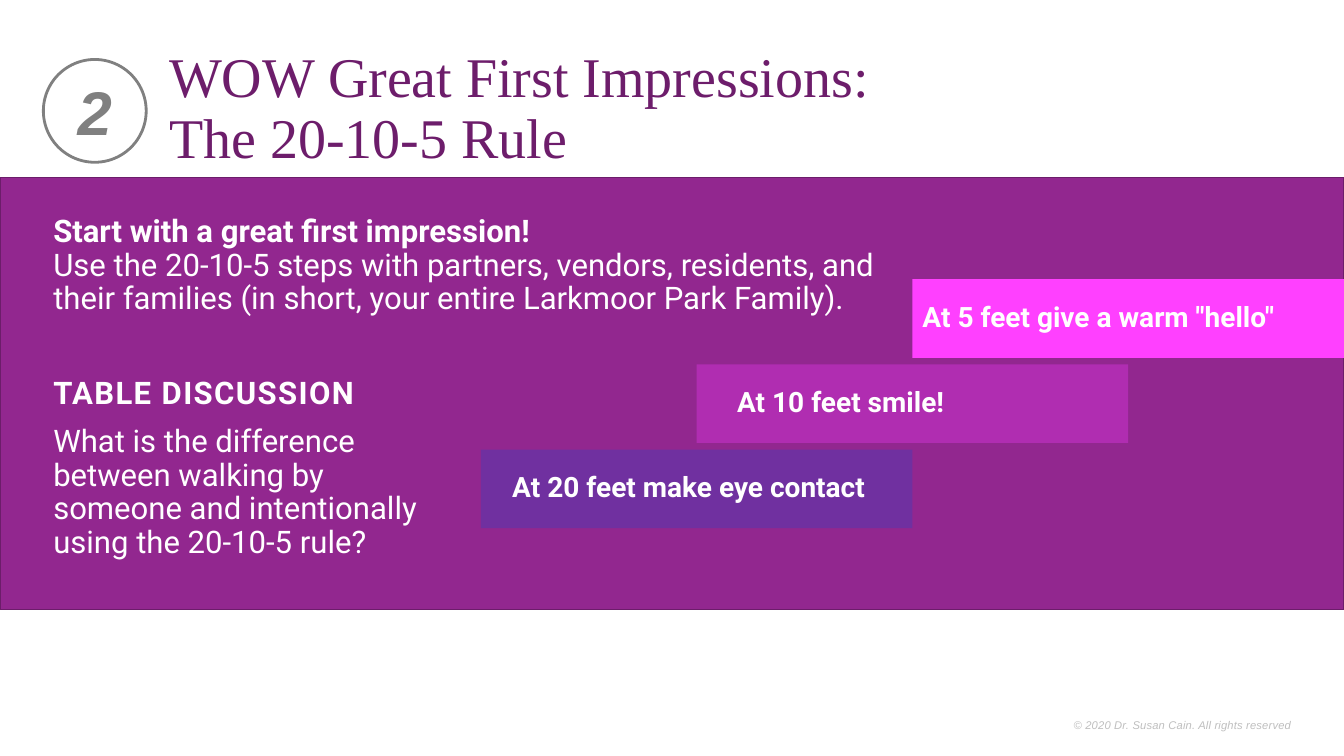
from pptx import Presentation
from pptx.dml.color import RGBColor
from pptx.enum import shapes, text
from pptx.util import Inches, Pt

deck = Presentation()
deck.slide_width, deck.slide_height = Inches(13.33), Inches(7.5)
slide = deck.slides.add_slide(deck.slide_layouts[6])
kind = shapes.MSO_SHAPE
mid, top = text.MSO_ANCHOR.MIDDLE, text.MSO_ANCHOR.TOP
left, center = text.PP_ALIGN.LEFT, text.PP_ALIGN.CENTER


def box(form, x, y, w, h, fill=None, line=None, width=1):
    area = [Inches(v) for v in (x, y, w, h)]
    if form is None:
        return slide.shapes.add_textbox(*area)
    item = slide.shapes.add_shape(form, *area)
    item.shadow.inherit = False
    item.fill.solid()
    item.fill.fore_color.rgb = RGBColor.from_string(fill)
    if line:
        item.line.color.rgb = RGBColor.from_string(line)
        item.line.width = Pt(width)
    else:
        item.line.fill.background()
    return item


def write(item, words, size, color="FFFFFF", face="Roboto", bold=False, italic=False,
          align=left, anchor=top, space=None, before=0, track=0, wrap=True,
          inset=(0.1, 0.05), more=False, join=False):
    frame = item.text_frame
    frame.word_wrap = wrap
    frame.vertical_anchor = anchor
    frame.margin_left, frame.margin_top = [Inches(v) for v in inset]
    para = frame.add_paragraph() if more else frame.paragraphs[-1]
    para.alignment = align
    if space:
        para.line_spacing = space
    if before:
        para.space_before = Pt(before)
    for i, part in enumerate(words.split("\n")):
        if i or join:
            para.add_line_break()
        run = para.add_run()
        run.text = part
        font = run.font
        font.size, font.name, font.bold, font.italic = Pt(size), face, bold, italic
        font.color.rgb = RGBColor.from_string(color)
        if track:
            run._r.get_or_add_rPr().set("spc", str(int(track * 100)))


box(kind.RECTANGLE, 0, 1.76, 13.33, 4.29, "92278F", "6C1D6A")

note = box(None, 10.55, 7.08, 2.41, 0.24)
write(note, "© 2020 Dr. Susan Cain. All rights reserved", 8, "BFBFBF", "Arial",
      italic=True, track=0.1, wrap=False)

body = box(None, 0.43, 2.13, 8.71, 3.75)
style = dict(size=22.2, space=0.9, inset=(0.1, 0.01))
write(body, "Start with a great first impression!", bold=True, **style)
write(body, "Use the 20-10-5 steps with partners, vendors, residents, and their families "
      "(in short, your entire Larkmoor Park Family).", join=True, **style)
write(body, "TABLE DISCUSSION", bold=True, track=1, before=44, more=True, **style)
write(body, "What is the difference\nbetween walking by\nsomeone and intentionally\n"
      "using the 20-10-5 rule?", before=10, more=True, **style)

title = box(None, 1.58, 0.44, 11.5, 1.31)
write(title, "WOW Great First Impressions:\nThe 20-10-5 Rule", 40, "6D1D6B",
      "Times New Roman", space=0.9)

badge = box(kind.OVAL, 0.43, 0.59, 1.02, 1.02, "FFFFFF", "808080", 2)
write(badge, "2", 44, "808080", "Arial", bold=True, italic=True, align=center, anchor=mid)

steps = [
    ("At 20 feet make eye contact", "7030A0", 0.31),
    ("At 10 feet smile!", "B02DB1", 0.4),
    ('At 5 feet give a warm "hello"', "FF40FF", 0.1),
]
for i, (words, fill, pad) in enumerate(steps):
    strip = box(kind.RECTANGLE, 4.77 + 2.14 * i, 4.46 - 0.845 * i, 4.28, 0.78, fill)
    write(strip, words, 20, bold=True, inset=(pad, 0.2))

deck.save("out.pptx")
